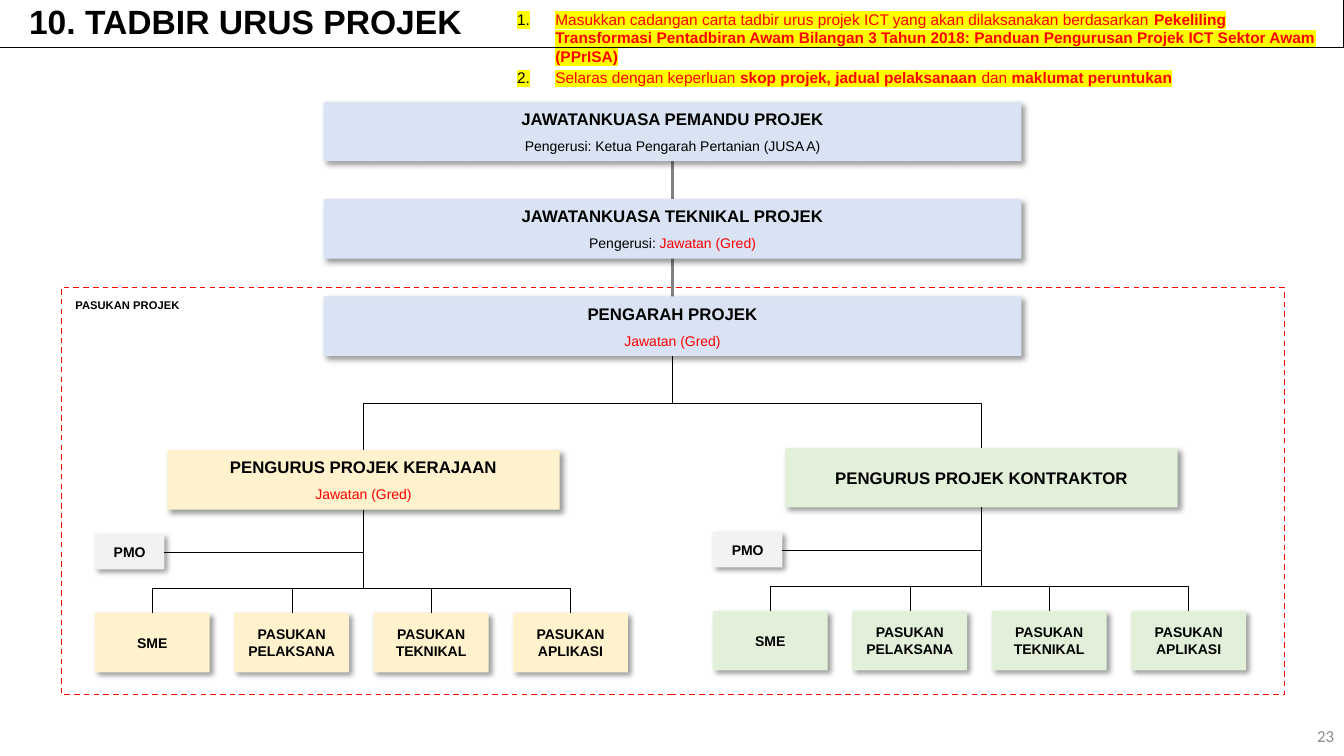
from lxml import etree
from pptx import Presentation
from pptx import util as u
from pptx.dml.color import RGBColor
from pptx.enum import dml, shapes, text
from pptx.oxml.ns import qn

BLACK, RED, YELLOW = "000000", "FF0000", "FFFF00"
BLUE, CREAM, GREEN, PALE = "DAE3F3", "FFF2CC", "E2F0D9", "F2F2F2"
LEFT, CENTER, RIGHT = text.PP_ALIGN.LEFT, text.PP_ALIGN.CENTER, text.PP_ALIGN.RIGHT


def rgb(value):
    return RGBColor.from_string(value)


def child(parent, tag, **attrs):
    return etree.SubElement(parent, qn(tag), {k: str(v) for k, v in attrs.items()})


def write(p, words, size=10, color=BLACK, bold=False, font="Arial", mark=None):
    """Add one formatted run to a paragraph."""
    r = p.add_run()
    r.text = words
    r.font.size, r.font.bold = u.Pt(size), bold
    r.font.color.rgb = rgb(color)
    if mark:
        child(child(r._r.get_or_add_rPr(), "a:highlight"), "a:srgbClr", val=mark)
    r.font.name = font


class Chart:
    """Style and current slide; positions are in grid columns and rows."""
    CELL = 0.1  # inches per column and per row

    def __init__(self, prs):
        self.s = prs.slides.add_slide(prs.slide_layouts[6])

    def at(self, *cells):
        return [u.Inches(c * self.CELL) for c in cells]

    def fill_text(self, sp, lines, align, after=0):
        """Each line is a list of (text, format) pairs."""
        tf = sp.text_frame
        tf.word_wrap = True
        tf.vertical_anchor = text.MSO_ANCHOR.MIDDLE
        for i, line in enumerate(lines):
            p = tf.add_paragraph() if i else tf.paragraphs[0]
            p.alignment = align
            if after:
                p.space_after = u.Pt(after)
            for words, fmt in line:
                write(p, words, **fmt)
        return tf

    def label(self, cells, lines, align=CENTER):
        return self.fill_text(self.s.shapes.add_textbox(*self.at(*cells)), lines, align)

    def rect(self, cells, line=None, width=1, dash=None):
        sp = self.s.shapes.add_shape(shapes.MSO_SHAPE.RECTANGLE, *self.at(*cells))
        sp.shadow.inherit = False
        sp.fill.background()
        if line:
            sp.line.color.rgb = rgb(line)
            sp.line.width = u.Pt(width)
            sp.line.dash_style = dash
        else:
            sp.line.fill.background()
        return sp

    def card(self, cells, fill, title, size=10, detail=()):
        """Filled box with a soft shadow, a bold title and an optional second line."""
        sp = self.rect(cells)
        sp.fill.solid()
        sp.fill.fore_color.rgb = rgb(fill)
        effects = sp._element.spPr.find(qn("a:effectLst"))
        shadow = child(effects, "a:outerShdw", blurRad=u.Pt(4), dist=u.Pt(3),
                       dir=45 * 60000, algn="tl", rotWithShape=0)
        child(child(shadow, "a:srgbClr", val=BLACK), "a:alpha", val=40000)
        lines = [[(title, dict(size=size, bold=True))]]
        if detail:
            lines.append(detail)
        self.fill_text(sp, lines, CENTER, after=6)

    def line(self, x1, y1, x2, y2, color=BLACK, width=0.25,
             kind=shapes.MSO_CONNECTOR.STRAIGHT):
        cn = self.s.shapes.add_connector(kind, *self.at(x1, y1, x2, y2))
        cn.line.color.rgb = rgb(color)
        cn.line.width = u.Pt(width)
        child(cn._element.spPr, "a:effectLst")
        return cn

    def branch(self, x1, y1, x2, y2, bend=0.5):
        """Elbow that leaves downwards: a turned elbow about the same centre."""
        cx, cy, drop, reach = (x1 + x2) / 2, (y1 + y2) / 2, y2 - y1, abs(x2 - x1)
        cn = self.line(cx - drop / 2, cy - reach / 2, cx + drop / 2, cy + reach / 2,
                       kind=shapes.MSO_CONNECTOR.ELBOW)
        spPr = cn._element.spPr
        xfrm = spPr.find(qn("a:xfrm"))
        xfrm.set("rot", str((90 if x2 < x1 else 270) * 60000))
        if x2 > x1:
            xfrm.set("flipH", "1")
        guides = spPr.find(qn("a:prstGeom")).find(qn("a:avLst"))
        child(guides, "a:gd", name="adj1", fmla=f"val {round(bend * 100000)}")


def header(chart):
    # Title band
    band = chart.rect((0, 0, 133.3, 4.7), BLACK, 0.75)
    tf = chart.fill_text(band, [[("10. TADBIR URUS PROJEK", dict(size=24, bold=True))]], LEFT)
    p = tf.paragraphs[0]
    p.line_spacing = 0.9
    p._p.get_or_add_pPr().set("marL", str(u.Inches(0.19)))

    # Page number
    chart.label((103.3, 71, 30, 4),
                [[("23", dict(size=12, color="8C8C8C", font="Calibri"))]], RIGHT)

    # Numbered guidance
    plain = dict(size=11, color=RED, mark=YELLOW)
    strong = dict(plain, bold=True)
    tf = chart.label((50.3, 0.5, 82.2, 8.4), [
        [("Masukkan cadangan carta tadbir urus projek ICT yang akan dilaksanakan berdasarkan ", plain),
         ("Pekeliling Transformasi Pentadbiran Awam Bilangan 3 Tahun 2018: "
          "Panduan Pengurusan Projek ICT Sektor Awam (PPrISA)", strong)],
        [("Selaras dengan keperluan ", plain), ("skop projek, jadual pelaksanaan ", strong),
         ("dan", plain), (" maklumat peruntukan", strong)],
    ], LEFT)
    tf.vertical_anchor = text.MSO_ANCHOR.TOP
    for p in tf.paragraphs:
        pPr = p._p.get_or_add_pPr()
        pPr.set("marL", str(u.Inches(0.38)))
        pPr.set("indent", str(-u.Inches(0.38)))
        child(child(pPr, "a:buClr"), "a:srgbClr", val=BLACK)
        child(pPr, "a:buFont", typeface="+mj-lt")
        child(pPr, "a:buAutoNum", type="arabicPeriod")
    tf.paragraphs[1].space_before = u.Pt(2.2)


def team(chart, x, y, fill, manager, detail=()):
    """Manager, PMO and four teams; x, y is the manager's top centre."""
    left, bottom, teams_y = x - 26.6, y + 5.9, y + 16.15
    chart.card((x - 19.4, y, 38.9, 5.9), fill, manager, 12, detail)
    chart.card((left, y + 8.35, 6.9, 3.5), PALE, "PMO")
    chart.line(x, y + 10.1, left + 6.9, y + 10.1)
    for i, name in enumerate(("SME", "PASUKAN PELAKSANA", "PASUKAN TEKNIKAL", "PASUKAN APLIKASI")):
        team_x = left + i * 13.83
        chart.card((team_x, teams_y, 11.4, 5.9), fill, name)
        chart.branch(x, bottom, team_x + 5.7, teams_y, 0.76)


def main():
    prs = Presentation()
    prs.slide_width, prs.slide_height = u.Inches(13.33), u.Inches(7.5)
    chart = Chart(prs)
    header(chart)

    # Project team frame
    chart.rect((6.1, 28.5, 121.3, 40.4), RED, 1, dml.MSO_LINE.DASH)
    chart.label((6.1, 28.5, 13.1, 3.5), [[("PASUKAN PROJEK", dict(size=8, bold=True))]])

    # Committees and director
    post = ("Jawatan (Gred)", dict(color=RED))
    middle, top, step = 66.7, 10.1, 9.65
    chart.line(middle, 16, middle, 35.3, "808080", 1.5)
    for i, (title, detail) in enumerate((
            ("JAWATANKUASA PEMANDU PROJEK", [("Pengerusi: Ketua Pengarah Pertanian (JUSA A)", {})]),
            ("JAWATANKUASA TEKNIKAL PROJEK", [("Pengerusi: ", {}), post]),
            ("PENGARAH PROJEK", [post]))):
        chart.card((32.1, top + i * step, 69.2, 5.9), BLUE, title, 12, detail)

    # Government and contractor sides
    for x, y, fill, manager, detail in (
            (36, 44.65, CREAM, "PENGURUS PROJEK KERAJAAN", [post]),
            (97.3, 44.45, GREEN, "PENGURUS PROJEK KONTRAKTOR", ())):
        team(chart, x, y, fill, manager, detail)
        chart.branch(middle, 35.3, x, y, 4.7 / (y - 35.3))

    prs.save("out.pptx")


if __name__ == "__main__":
    main()
